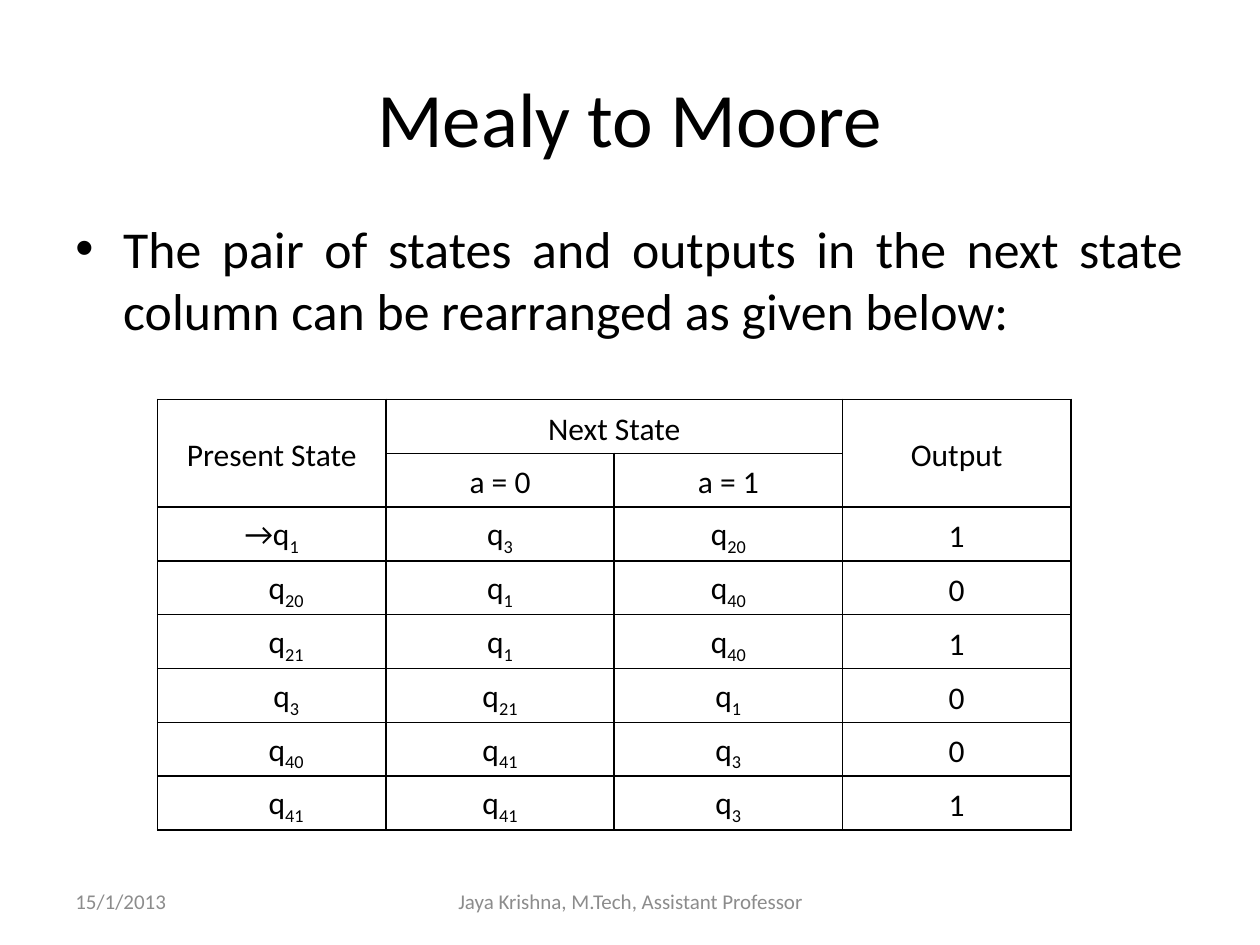
from lxml import etree
from pptx import Presentation
from pptx.dml.color import RGBColor
from pptx.enum import text
from pptx.oxml.ns import qn
from pptx.util import Inches, Pt

COLORS = {"ink": "000000", "footer": "8C8C8C", "paper": "FFFFFF"}
FONT = "Calibri"
TITLE = "Mealy to Moore"
BODY = "The pair of states and outputs in the next state column can be rearranged as given below:"
FOOTERS = [
    ("15/1/2013", 0.5, 2.33, text.PP_ALIGN.LEFT),
    ("Jaya Krishna, M.Tech, Assistant Professor", 3.42, 3.17, text.PP_ALIGN.CENTER),
]
HEADERS = [
    ["Present State", "Next State", "", "Output"],
    ["", "a = 0", "a = 1", ""],
]
MERGES = [((0, 0), (1, 0)), ((0, 1), (0, 2)), ((0, 3), (1, 3))]
STATES = [
    ["→q_1", "q_3", "q_20", "1"],
    ["q_20", "q_1", "q_40", "0"],
    ["q_21", "q_1", "q_40", "1"],
    ["q_3", "q_21", "q_1", "0"],
    ["q_40", "q_41", "q_3", "0"],
    ["q_41", "q_41", "q_3", "1"],
]
TABLE = (1.25, 3.17, 7.25, 3.42)
CELL_MARGIN = 0.07
ARROW_INDENT = 0.23


def style(r, size, color="ink"):
    r.font.name = FONT
    r.font.size = Pt(size)
    r.font.color.rgb = RGBColor.from_string(COLORS[color])


def place(sp, *box):
    sp.left, sp.top, sp.width, sp.height = map(Inches, box)


def fill_text(sp, words, size, align, anchor, color="ink"):
    tf = sp.text_frame
    tf.word_wrap = True
    tf.vertical_anchor = anchor
    tf.text = words
    p = tf.paragraphs[0]
    p.alignment = align
    style(p.runs[0], size, color)
    return p


def add_bullet(p, indent):
    pPr = p._p.get_or_add_pPr()
    pPr.set("marL", str(Inches(indent)))
    pPr.set("indent", str(-Inches(indent)))
    etree.SubElement(pPr, qn("a:buFont"), typeface="Arial")
    etree.SubElement(pPr, qn("a:buChar"), char="•")


def add_borders(cell):
    tcPr = cell._tc.get_or_add_tcPr()
    for side in ("lnL", "lnR", "lnT", "lnB"):
        ln = etree.SubElement(tcPr, qn(f"a:{side}"), w=str(Pt(1)))
        fill = etree.SubElement(ln, qn("a:solidFill"))
        etree.SubElement(fill, qn("a:srgbClr"), val=COLORS["ink"])


def fill_cell(cell, words, indent):
    add_borders(cell)
    cell.fill.solid()
    cell.fill.fore_color.rgb = RGBColor.from_string(COLORS["paper"])
    cell.vertical_anchor = text.MSO_ANCHOR.MIDDLE
    cell.margin_left = Inches(CELL_MARGIN + indent)
    cell.margin_right = Inches(CELL_MARGIN)
    cell.margin_top = cell.margin_bottom = 0
    p = cell.text_frame.paragraphs[0]
    p.alignment = text.PP_ALIGN.CENTER
    p.line_spacing = 1.15
    base, _, subscript = words.partition("_")
    for part, offset in ((base, 0), (subscript, -25)):
        if part:
            r = p.add_run()
            r.text = part
            style(r, 18)
            if offset:
                r.font._element.set("baseline", str(offset * 1000))


def add_state_table(s):
    rows = HEADERS + STATES
    table = s.shapes.add_table(len(rows), len(rows[0]), *map(Inches, TABLE)).table
    table.first_row = table.horz_banding = False
    for column in table.columns:
        column.width = Inches(TABLE[2] / len(rows[0]))
    for row in table.rows:
        row.height = Inches(TABLE[3] / len(rows))
    for start, end in MERGES:
        table.cell(*start).merge(table.cell(*end))
    for i, row in enumerate(rows):
        for j, words in enumerate(row):
            indented = j == 0 and words.startswith("q")
            fill_cell(table.cell(i, j), words, ARROW_INDENT if indented else 0)


def main():
    prs = Presentation()
    prs.slide_width, prs.slide_height = Inches(10), Inches(7.5)
    s = prs.slides.add_slide(prs.slide_layouts[5])

    title = s.shapes.title
    place(title, 0.5, 0.3, 9, 1.25)
    fill_text(title, TITLE, 44, text.PP_ALIGN.CENTER, text.MSO_ANCHOR.MIDDLE)

    body = s.shapes.add_textbox(*map(Inches, (0.5, 1.67, 9, 1.33)))
    p = fill_text(body, BODY, 29.6, text.PP_ALIGN.JUSTIFY, text.MSO_ANCHOR.TOP)
    p.space_before = Pt(6)
    add_bullet(p, 0.38)

    for words, left, width, align in FOOTERS:
        footer = s.shapes.add_textbox(*map(Inches, (left, 6.95, width, 0.4)))
        fill_text(footer, words, 12, align, text.MSO_ANCHOR.MIDDLE, "footer")

    add_state_table(s)
    prs.save("out.pptx")


if __name__ == "__main__":
    main()
